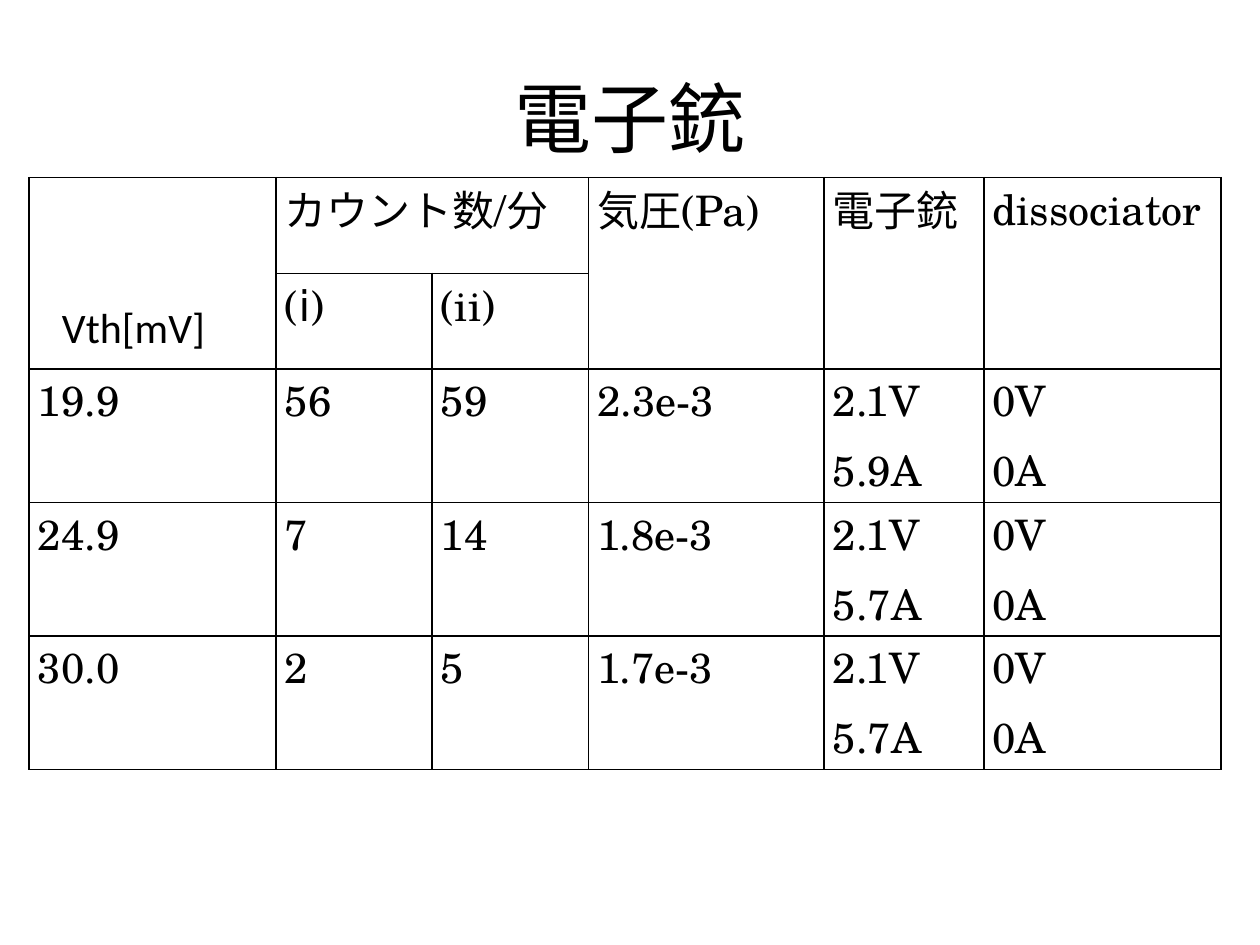
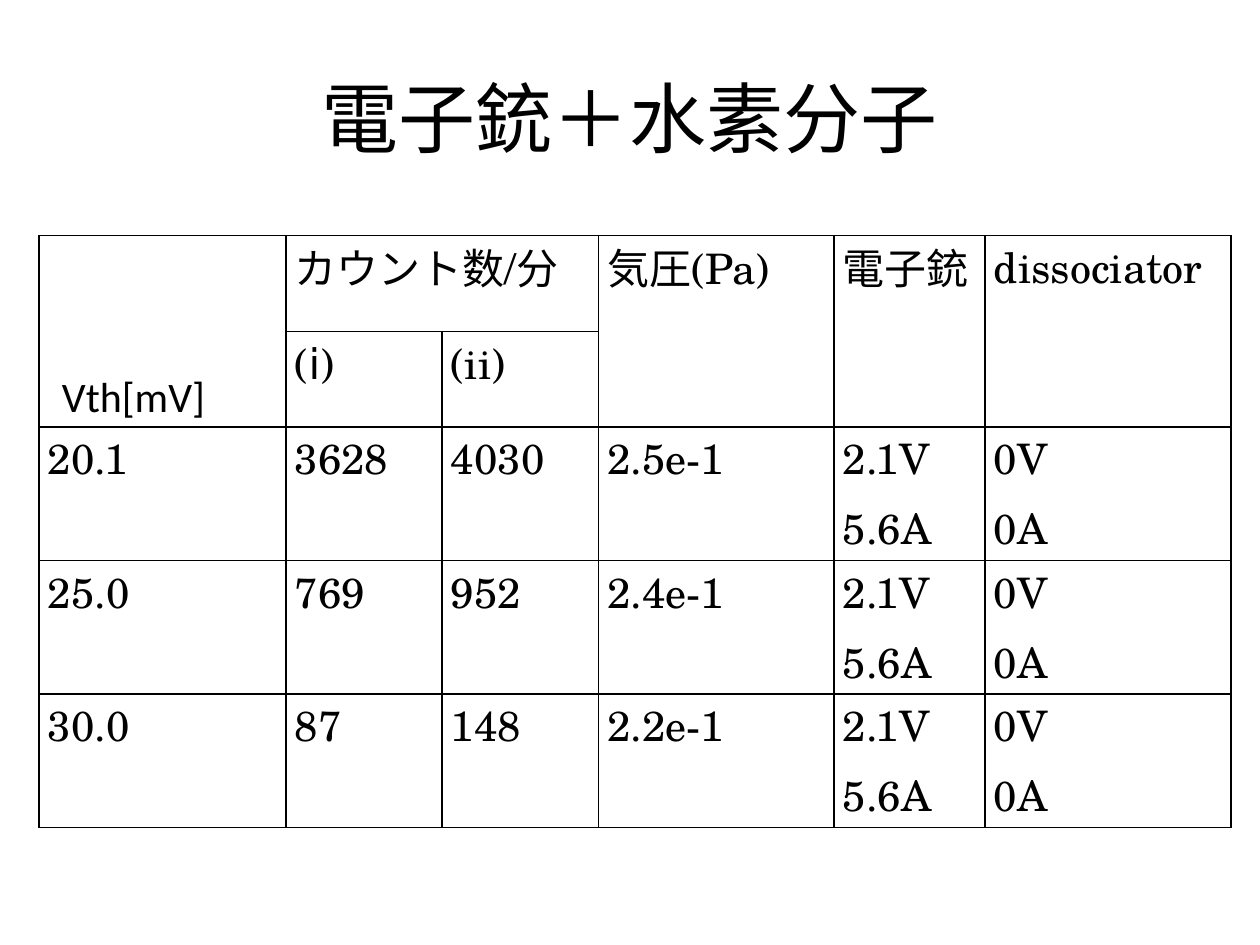
from dataclasses import dataclass

from lxml.etree import SubElement
from pptx import Presentation
from pptx.dml.color import RGBColor
from pptx.enum.text import MSO_ANCHOR, PP_ALIGN
from pptx.oxml.ns import qn
from pptx.util import Inches, Pt

BLACK = RGBColor(0x00, 0x00, 0x00)
TABLE_FONT = "TeX Gyre Schola"
LABEL_FONT = "Calibri"
TITLE_SIZE = 44
BODY_SIZE = 24
ROW_HEIGHTS = (0.76, 0.76, 1.06, 1.06, 1.06)
HEADER = (
    ("", "カウント数/分", "", "気圧(Pa)", "電子銃", "dissociator"),
    ("", "(ⅰ)", "(ii)", "", "", ""),
)
# First row, first column, last row, last column
MERGES = ((0, 1, 0, 2),) + tuple((0, col, 1, col) for col in (0, 3, 4, 5))


@dataclass(frozen=True)
class Measurement:
    title: str
    title_font: str
    left: float
    top: float
    col_widths: tuple[float, ...]
    label_top: float
    rows: tuple[tuple[str, ...], ...]


MEASUREMENTS = (
    Measurement(
        "電子銃", "Calibri", 0.23, 1.41,
        (1.96, 1.24, 1.24, 1.87, 1.27, 1.88), 2.34,
        (
            ("19.9", "56", "59", "2.3e-3", "2.1V\n5.9A", "0V\n0A"),
            ("24.9", "7", "14", "1.8e-3", "2.1V\n5.7A", "0V\n0A"),
            ("30.0", "2", "5", "1.7e-3", "2.1V\n5.7A", "0V\n0A"),
        ),
    ),
    Measurement(
        "電子銃＋水素分子", "Arial Narrow", 0.31, 1.87,
        (1.96, 1.24, 1.24, 1.87, 1.2, 1.95), 2.89,
        (
            ("20.1", "3628", "4030", "2.5e-1", "2.1V\n5.6A", "0V\n0A"),
            ("25.0", "769", "952", "2.4e-1", "2.1V\n5.6A", "0V\n0A"),
            ("30.0", "87", "148", "2.2e-1", "2.1V\n5.6A", "0V\n0A"),
        ),
    ),
)


def write(tf, text: str, font: str, size: int, align, space_before: float = 0) -> None:
    """Fill a text frame, one paragraph for each line of text."""
    tf.text = text
    for p in tf.paragraphs:
        p.alignment = align
        p.space_before = Pt(space_before)
        for r in p.runs:
            for name, value in {"name": font, "size": Pt(size)}.items():
                setattr(r.font, name, value)
            r.font.color.rgb = BLACK


def add_text(slide, box: tuple[float, ...], text: str, font: str, size: int, anchor) -> None:
    tf = slide.shapes.add_textbox(*map(Inches, box)).text_frame
    tf.word_wrap = True
    tf.vertical_anchor = anchor
    write(tf, text, font, size, PP_ALIGN.CENTER)


def add_borders(cell) -> None:
    tc_pr = cell._tc.get_or_add_tcPr()
    for side in ("a:lnL", "a:lnR", "a:lnT", "a:lnB"):
        ln = SubElement(tc_pr, qn(side), w=str(Pt(1)))
        fill = SubElement(ln, qn("a:solidFill"))
        SubElement(fill, qn("a:srgbClr"), val=str(BLACK))


def format_cell(cell, text: str) -> None:
    margins = {"margin_left": 0.07, "margin_right": 0.07, "margin_top": 0, "margin_bottom": 0}
    for name, value in margins.items():
        setattr(cell, name, Inches(value))
    add_borders(cell)
    cell.fill.background()
    if text:
        write(cell.text_frame, text, TABLE_FONT, BODY_SIZE, PP_ALIGN.JUSTIFY, BODY_SIZE * 0.2)


def add_count_table(slide, m: Measurement) -> None:
    size = (m.left, m.top, sum(m.col_widths), sum(ROW_HEIGHTS))
    table = slide.shapes.add_table(
        len(ROW_HEIGHTS), len(m.col_widths), *map(Inches, size)
    ).table
    table.first_row = table.horz_banding = False
    for column, width in zip(table.columns, m.col_widths):
        column.width = Inches(width)
    for row, height, texts in zip(table.rows, ROW_HEIGHTS, HEADER + m.rows):
        row.height = Inches(height)
        for cell, text in zip(row.cells, texts):
            format_cell(cell, text)
    for top, left, bottom, right in MERGES:
        table.cell(top, left).merge(table.cell(bottom, right))


def main() -> None:
    prs = Presentation()
    prs.slide_width, prs.slide_height = Inches(10), Inches(7.5)
    for m in MEASUREMENTS:
        slide = prs.slides.add_slide(prs.slide_layouts[6])
        add_text(slide, (0.5, 0.3, 9, 1.25), m.title, m.title_font, TITLE_SIZE, MSO_ANCHOR.MIDDLE)
        add_count_table(slide, m)
        add_text(slide, (0.16, m.label_top, 1.8, 0.55), "Vth[mV]", LABEL_FONT, BODY_SIZE, MSO_ANCHOR.TOP)
    prs.save("out.pptx")


if __name__ == "__main__":
    main()
